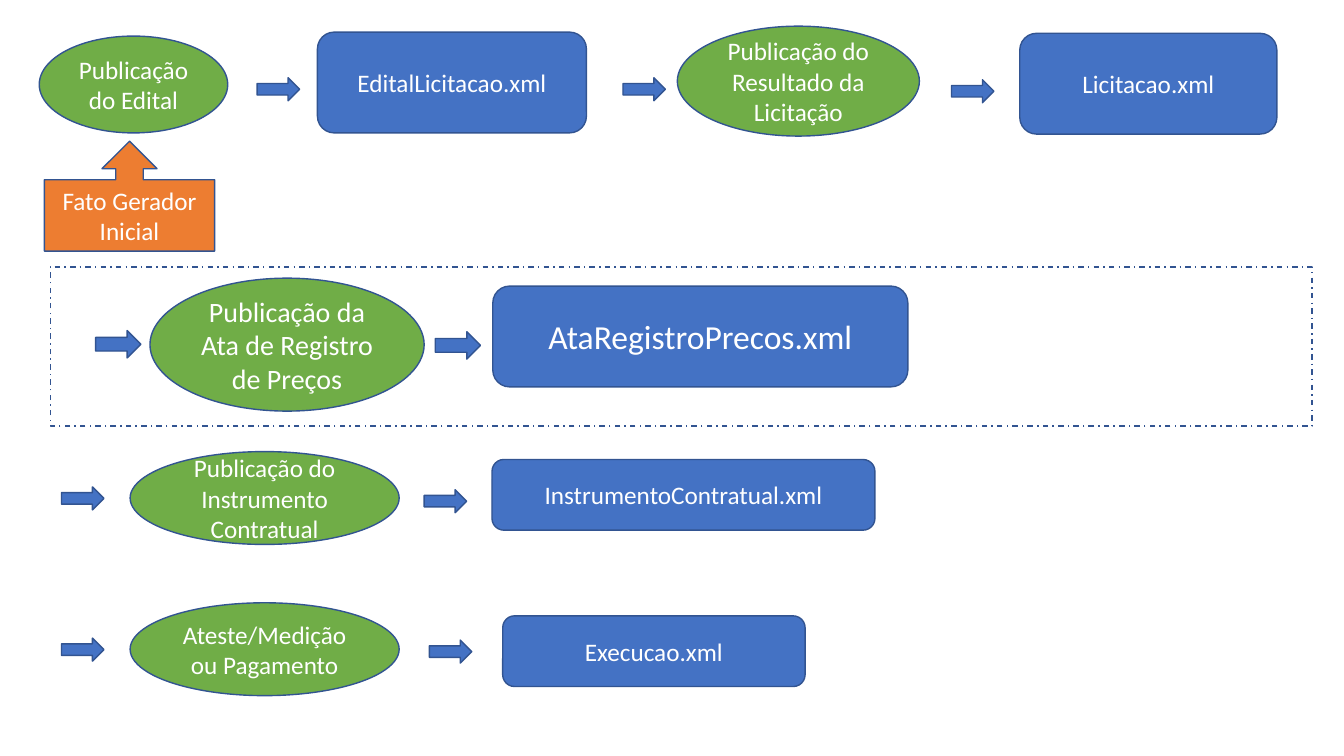
from dataclasses import dataclass

from pptx import Presentation
from pptx.dml.color import RGBColor
from pptx.enum.dml import MSO_LINE
from pptx.enum.shapes import MSO_SHAPE
from pptx.enum.text import MSO_ANCHOR, PP_ALIGN
from pptx.util import Cm, Pt

ELLIPSE = MSO_SHAPE.OVAL
ROUNDED = MSO_SHAPE.ROUNDED_RECTANGLE
RECTANGLE = MSO_SHAPE.RECTANGLE
RIGHT_ARROW = MSO_SHAPE.RIGHT_ARROW
UP_CALLOUT = MSO_SHAPE.UP_ARROW_CALLOUT
DASH_DOT = MSO_LINE.DASH_DOT
MIDDLE = MSO_ANCHOR.MIDDLE
CENTER = PP_ALIGN.CENTER


@dataclass(frozen=True)
class Theme:
    """Colours, font and type sizes of the flow diagram."""
    event: RGBColor = RGBColor(0x70, 0xAD, 0x47)
    file: RGBColor = RGBColor(0x44, 0x72, 0xC4)
    trigger: RGBColor = RGBColor(0xED, 0x7D, 0x31)
    outline: RGBColor = RGBColor(0x32, 0x54, 0x91)
    text: RGBColor = RGBColor(0xFF, 0xFF, 0xFF)
    font: str = "Calibri"
    normal: int = 18
    medium: int = 20
    large: int = 24
    line: int = 1


class FlowSlide:
    """Draws the elements of the flow on one slide."""

    def __init__(self, slide, theme):
        self.slide = slide
        self.theme = theme

    def shape(self, kind, place, fill=None):
        """Add an outlined shape at a place given in centimetres."""
        shape = self.slide.shapes.add_shape(kind, *map(Cm, place))
        shape.shadow.inherit = False
        if fill is None:
            shape.fill.background()
        else:
            shape.fill.solid()
            shape.fill.fore_color.rgb = fill
        shape.line.color.rgb = self.theme.outline
        shape.line.width = Pt(self.theme.line)
        return shape

    def label(self, shape, text, size):
        """Write centred text inside a shape."""
        frame = shape.text_frame
        frame.word_wrap = True
        frame.vertical_anchor = MIDDLE
        para = frame.paragraphs[0]
        para.alignment = CENTER
        span = para.add_run()
        span.text = text
        span.font.name = self.theme.font
        span.font.size = Pt(size)
        span.font.color.rgb = self.theme.text

    def event(self, text, place, size):
        """Add an event ellipse."""
        self.label(self.shape(ELLIPSE, place, self.theme.event), text, size)

    def file(self, text, place, size):
        """Add a rounded box that names a file."""
        self.label(self.shape(ROUNDED, place, self.theme.file), text, size)

    def trigger(self, text, place, size):
        """Add the callout that points up at the first event."""
        self.label(self.shape(UP_CALLOUT, place, self.theme.trigger), text, size)

    def arrow(self, left, top, width=1.07, height=0.58):
        """Add a block arrow pointing right."""
        self.shape(RIGHT_ARROW, (left, top, width, height), self.theme.file)

    def frame(self, place):
        """Add an unfilled dash-dot frame."""
        self.shape(RECTANGLE, place).line.dash_style = DASH_DOT


def main():
    """Build the slide and save the deck."""
    deck = Presentation()
    deck.slide_width, deck.slide_height = Cm(33.87), Cm(19.05)
    theme = Theme()
    page = FlowSlide(deck.slides.add_slide(deck.slide_layouts[6]), theme)

    events = [
        ("Publicação do Edital", (0.99, 0.91, 4.75, 2.44), theme.normal),
        ("Publicação do Resultado da Licitação", (17.07, 0.66, 6.1, 2.77), theme.normal),
        ("Publicação da Ata de Registro de Preços", (3.78, 7.01, 6.91, 3.35), theme.medium),
        ("Publicação do Instrumento Contratual", (3.28, 11.38, 6.78, 2.34), theme.normal),
        ("Ateste/Medição ou Pagamento", (3.28, 15.19, 6.78, 2.34), theme.normal),
    ]
    files = [
        ("EditalLicitacao.xml", (8, 0.81, 6.78, 2.54), theme.normal),
        ("Licitacao.xml", (25.7, 0.84, 6.48, 2.54), theme.normal),
        ("AtaRegistroPrecos.xml", (12.42, 7.21, 10.46, 2.54), theme.large),
        ("InstrumentoContratual.xml", (12.4, 11.58, 9.65, 1.78), theme.normal),
        ("Execucao.xml", (12.67, 15.52, 7.62, 1.78), theme.normal),
    ]
    arrows = [
        (6.48, 1.96), (15.7, 1.96), (23.98, 2.01),
        (2.41, 8.33, 1.14, 0.69), (10.97, 8.36, 1.14, 0.69),
        (1.55, 12.27), (10.69, 12.34),
        (1.55, 16.08), (10.82, 16.13),
    ]
    for event in events:
        page.event(*event)
    for file in files:
        page.file(*file)
    for arrow in arrows:
        page.arrow(*arrow)
    page.frame((1.27, 6.73, 31.8, 4.01))
    page.trigger("Fato Gerador Inicial", (1.12, 3.56, 4.29, 2.77), theme.normal)

    deck.save("out.pptx")


if __name__ == "__main__":
    main()
